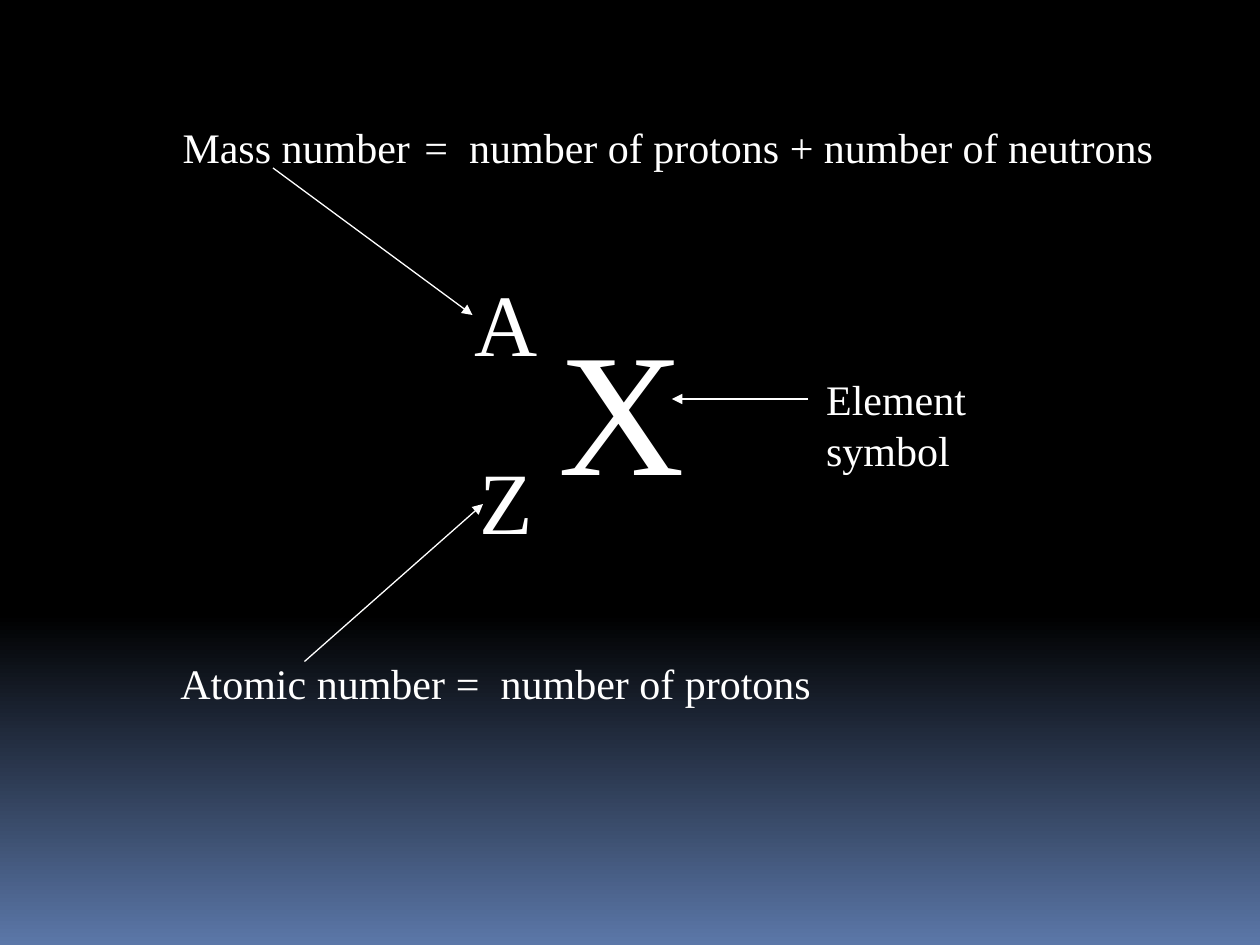
from copy import deepcopy

from pptx import Presentation
from pptx.dml.color import RGBColor
from pptx.enum.shapes import MSO_CONNECTOR
from pptx.enum.text import MSO_AUTO_SIZE
from pptx.oxml.ns import qn
from pptx.util import Inches, Pt
from lxml import etree

STRAIGHT = MSO_CONNECTOR.STRAIGHT
FIT_SHAPE = MSO_AUTO_SIZE.SHAPE_TO_FIT_TEXT

COLORS = {"night": "000000", "horizon": "5B77A8", "ink": "FFFFFF"}
FONT = "Times New Roman"
CELL = Inches(1) / 12  # the slide is a grid of 120 columns and 90 rows
SYMBOL, INDEX, LABEL = 100, 50, 24  # text sizes in points


def color(name):
    return RGBColor.from_string(COLORS[name])


def cells(*lengths):
    return [round(length * CELL) for length in lengths]


class NotationSlide:
    def __init__(self, presentation):
        self.slide = presentation.slides.add_slide(presentation.slide_layouts[6])

    def background(self, dark_until):
        """Dark down to a share of the height, then fading to the horizon."""
        fill = self.slide.background.fill
        fill.gradient()
        fill.gradient_angle = 270
        for stop, name, position in zip(fill.gradient_stops, ("night", "horizon"), (0, 1)):
            stop.color.rgb = color(name)
            stop.position = position
        top_stop = next(self.slide.element.iter(qn("a:gs")))
        middle_stop = deepcopy(top_stop)
        middle_stop.set("pos", str(round(dark_until * 100000)))
        top_stop.addnext(middle_stop)

    def text(self, wording, column, row, columns, size):
        rows = 0.2 * size + 1.2  # one line and its margins
        frame = self.slide.shapes.add_textbox(*cells(column, row, columns, rows)).text_frame
        frame.word_wrap = False
        frame.auto_size = FIT_SHAPE
        run = frame.paragraphs[0].add_run()
        run.text = wording
        for attribute, value in {"name": FONT, "size": Pt(size)}.items():
            setattr(run.font, attribute, value)
        run.font.color.rgb = color("ink")

    def arrow(self, start, end):
        connector = self.slide.shapes.add_connector(STRAIGHT, *cells(*start, *end))
        connector.line.width = Pt(0.75)
        connector.line.color.rgb = color("ink")
        outline = connector.line._get_or_add_ln()
        etree.SubElement(outline, qn("a:tailEnd"), type="triangle")
        etree.SubElement(connector._element.spPr, qn("a:effectLst"))


def main():
    presentation = Presentation()
    presentation.slide_width, presentation.slide_height = cells(120, 90)
    notation = NotationSlide(presentation)
    notation.background(dark_until=0.65)

    # Nuclide symbol with its two indices
    notation.text("X", 52, 28, 14.4, SYMBOL)
    notation.text("A", 44, 25, 8.4, INDEX)
    notation.text("Z", 44.5, 42, 7.4, INDEX)

    # Names of the parts and their definitions
    mass_row, element_row, atomic_row = 11, 35, 62
    for wording, column, row, columns in (
        ("Mass number", 16.2, mass_row, 24.1),
        ("Atomic number", 16, atomic_row, 27.6),
        ("Element symbol", 77.5, element_row, 28.4),
        ("=  number of protons + number of neutrons", 39.25, mass_row, 71.8),
        ("=  number of protons", 42.25, atomic_row, 36.2),
    ):
        notation.text(wording, column, row, columns, LABEL)

    # Arrows from each name to its part
    for start, end in (
        ((26, 16), (45, 30)),
        ((29, 63), (46, 48)),
        ((77, 38), (64, 38)),
    ):
        notation.arrow(start, end)

    presentation.save("out.pptx")


if __name__ == "__main__":
    main()
